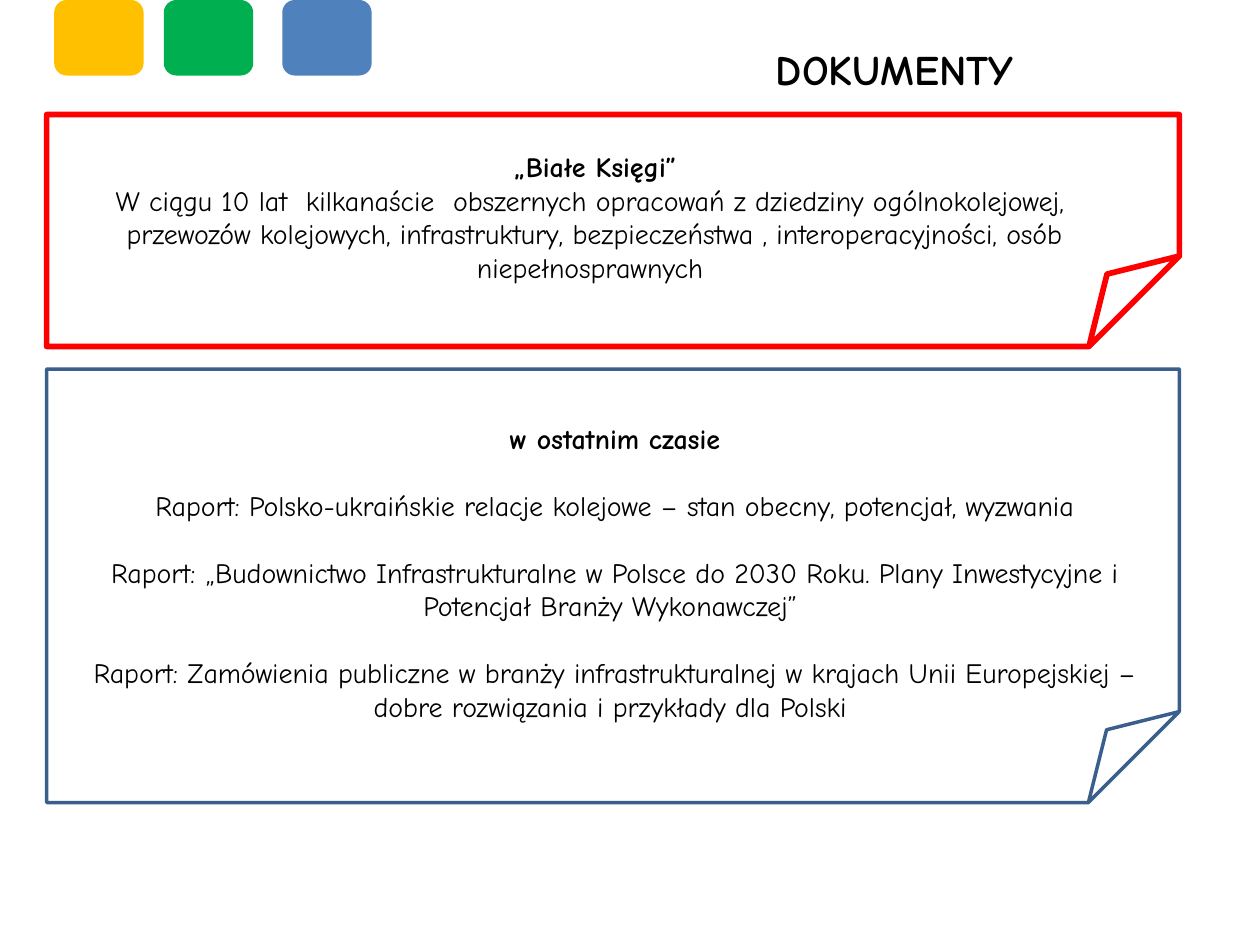
import pptx
import pptx.dml.color
import pptx.enum.shapes
import pptx.enum.text
import pptx.util
from pptx.util import Inches

FONT = "Comic Neue"
SHAPES = pptx.enum.shapes.MSO_SHAPE
CENTER = pptx.enum.text.PP_ALIGN.CENTER
MIDDLE = pptx.enum.text.MSO_ANCHOR.MIDDLE


def color(value):
    """Return the colour for a hex string."""
    return pptx.dml.color.RGBColor.from_string(value)


def add_tile(slide, left, fill):
    """Add a rounded tile at the top edge of the slide."""
    tile = slide.shapes.add_shape(
        SHAPES.ROUNDED_RECTANGLE, Inches(left), 0, Inches(0.71), Inches(0.6))
    tile.shadow.inherit = False
    tile.fill.solid()
    tile.fill.fore_color.rgb = color(fill)
    tile.line.fill.background()


def add_note(slide, top, height, fold, outline, weight):
    """Add an unfilled sheet with a folded corner."""
    note = slide.shapes.add_shape(
        SHAPES.FOLDED_CORNER, Inches(0.37), Inches(top), Inches(8.99), Inches(height))
    note.shadow.inherit = False
    note.element.spPr.prstGeom.rewrite_guides([("adj", round(fold * 100000))])
    note.fill.background()
    note.line.color.rgb = color(outline)
    note.line.width = pptx.util.Pt(weight)


def add_text(slide, left, top, width, height, heading, body=(), size=16, gap=0,
             align=CENTER, anchor=MIDDLE):
    """Add a bold heading followed by regular paragraphs set apart by a gap."""
    box = slide.shapes.add_textbox(
        Inches(left), Inches(top), Inches(width), Inches(height))
    frame = box.text_frame
    frame.word_wrap = True
    frame.vertical_anchor = anchor
    for index, wording in enumerate([heading, *body]):
        paragraph = frame.paragraphs[0] if index == 0 else frame.add_paragraph()
        paragraph.text = wording
        paragraph.alignment = align
        paragraph.space_before = pptx.util.Pt(gap if index else 0)
        paragraph.font.name = FONT
        paragraph.font.size = pptx.util.Pt(size)
        paragraph.font.bold = index == 0
        paragraph.font.color.rgb = color("000000")


def main():
    """Build the documents slide and save it."""
    deck = pptx.Presentation()
    deck.slide_width, deck.slide_height = Inches(10), Inches(7.5)
    slide = deck.slides.add_slide(deck.slide_layouts[6])

    add_text(slide, 6.06, 0.3, 2.76, 0.5, "DOKUMENTY", size=24,
             align=pptx.enum.text.PP_ALIGN.LEFT, anchor=pptx.enum.text.MSO_ANCHOR.TOP)
    for left, fill in ((0.43, "FFC000"), (1.3, "00B050"), (2.24, "4F81BD")):
        add_tile(slide, left, fill)

    add_note(slide, 0.91, 1.84, 0.39, "FF0000", 3.25)
    add_note(slide, 2.93, 3.44, 0.21, "3A5F8C", 2)
    add_text(slide, 0.43, 1.13, 8.58, 1.18, "„Białe Księgi”", [
        "W ciągu 10 lat  kilkanaście  obszernych opracowań z dziedziny "
        "ogólnokolejowej,  przewozów kolejowych, infrastruktury, bezpieczeństwa , "
        "interoperacyjności, osób niepełnosprawnych ",
    ])
    add_text(slide, 0.49, 3.28, 8.78, 2.52, "w ostatnim czasie", [
        "Raport: Polsko-ukraińskie relacje kolejowe – stan obecny, potencjał, wyzwania",
        "Raport: „Budownictwo Infrastrukturalne w Polsce do 2030 Roku. "
        "Plany Inwestycyjne i Potencjał Branży Wykonawczej” ",
        "Raport: Zamówienia publiczne w branży infrastrukturalnej w krajach "
        "Unii Europejskiej – dobre rozwiązania i przykłady dla Polski ",
    ], gap=19)

    deck.save("out.pptx")


if __name__ == "__main__":
    main()
